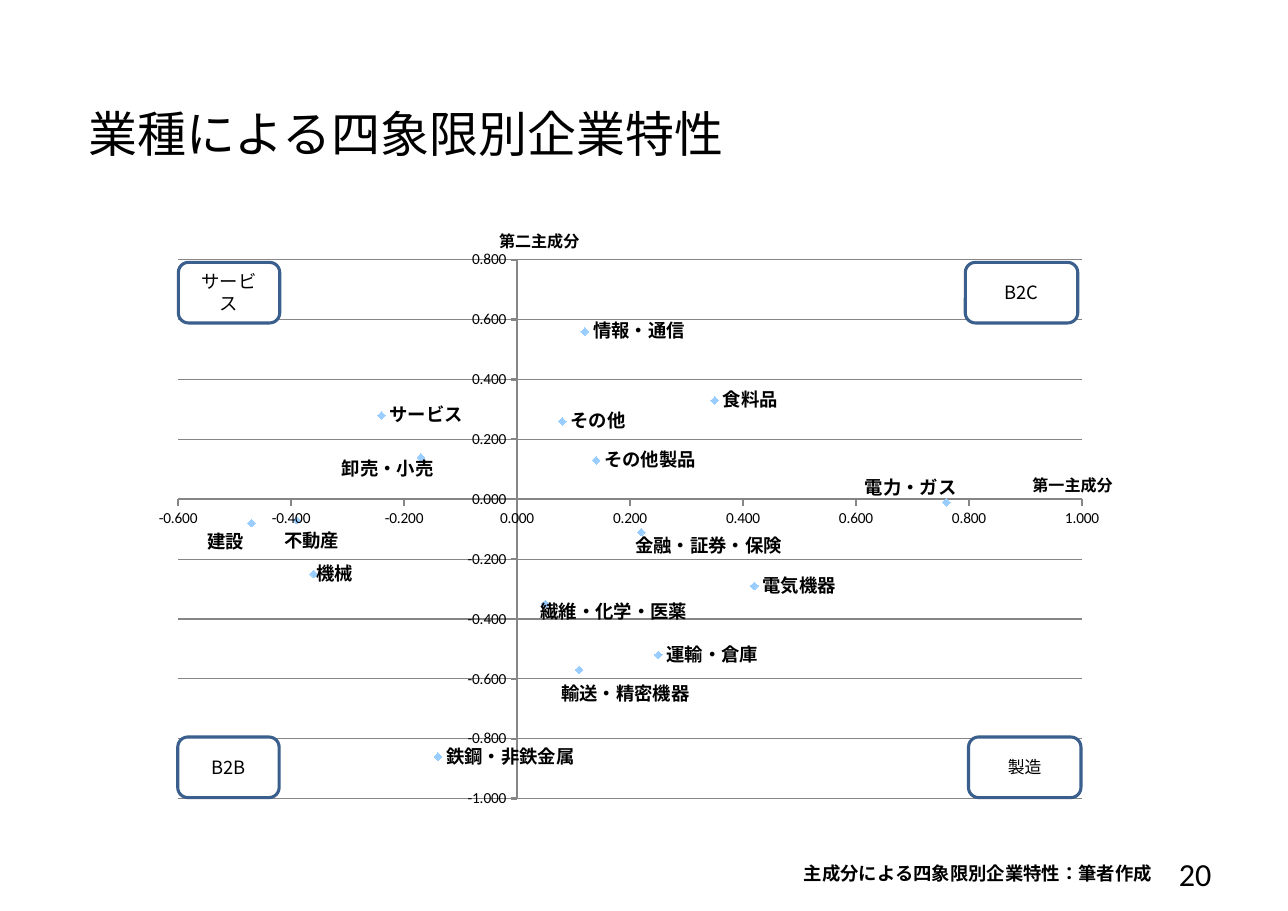
from lxml import etree
from pptx import Presentation
from pptx.chart.data import XyChartData
from pptx.dml.color import RGBColor
from pptx.enum.chart import XL_CHART_TYPE, XL_LABEL_POSITION, XL_MARKER_STYLE, XL_TICK_MARK
from pptx.enum.lang import MSO_LANGUAGE_ID
from pptx.enum.shapes import MSO_SHAPE
from pptx.enum.text import MSO_ANCHOR, PP_ALIGN
from pptx.oxml.ns import qn
from pptx.util import Inches, Pt

SCATTER = XL_CHART_TYPE.XY_SCATTER
LABEL_RIGHT = XL_LABEL_POSITION.RIGHT
DIAMOND = XL_MARKER_STYLE.DIAMOND
TICK_OUT, TICK_NONE = XL_TICK_MARK.OUTSIDE, XL_TICK_MARK.NONE
JAPANESE = MSO_LANGUAGE_ID.JAPANESE
ROUND_RECT = MSO_SHAPE.ROUNDED_RECTANGLE
MIDDLE = MSO_ANCHOR.MIDDLE
LEFT, CENTER, RIGHT = PP_ALIGN.LEFT, PP_ALIGN.CENTER, PP_ALIGN.RIGHT

W, H = Inches(11.69), Inches(8.27)
LATIN, CJK = "Calibri", "Noto Sans CJK JP"
BLACK, WHITE, GRAY, BORDER, MARKER = "000000", "FFFFFF", "868686", "3A5F8C", "99CCFF"

# Industry, first component, second component, label shift in % of the chart
INDUSTRIES = [
    ("食料品", 0.35, 0.33, 0, 0),
    ("建設", -0.47, -0.08, -4.8, 3.2),
    ("繊維・化学・医薬", 0.05, -0.35, -1.2, 1.3),
    ("鉄鋼・非鉄金属", -0.14, -0.86, 0, 0),
    ("機械", -0.36, -0.25, -0.5, 0),
    ("電気機器", 0.42, -0.29, 0, 0),
    ("輸送・精密機器", 0.11, -0.57, -2.4, 4.1),
    ("その他製品", 0.14, 0.13, 0, 0),
    ("卸売・小売", -0.17, 0.14, -8, 2),
    ("金融・証券・保険", 0.22, -0.11, -1.3, 2.3),
    ("運輸・倉庫", 0.25, -0.52, 0, 0),
    ("電力・ガス", 0.76, -0.01, -8.2, -2.3),
    ("情報・通信", 0.12, 0.56, 0, 0),
    ("不動産", -0.39, -0.07, -1.9, 3.5),
    ("サービス", -0.24, 0.28, 0, 0),
    ("その他", 0.08, 0.26, 0, 0),
]

# Quadrant name, left, top, width (in % of the slide), size
TOP, BOTTOM, BOX_H = 28.8, 80.9, 6.65
QUADRANTS = [
    ("サービス", 13.85, TOP, 7.87, 12),
    ("B2B", 13.8, BOTTOM, 7.87, 12),
    ("B2C", 74.95, TOP, 8.73, 12),
    ("製造", 75.2, BOTTOM, 8.73, 11),
]


def rgb(value):
    return RGBColor.from_string(value)


def area(x, y, w, h):
    """Turn percentages of the slide into lengths."""
    return [int(v * side / 100) for v, side in zip((x, y, w, h), (W, H, W, H))]


def write(tf, text, size=12, bold=False, font=LATIN, align=LEFT):
    p = tf.paragraphs[0]
    p.alignment = align
    r = p.add_run()
    r.text = text
    r.font.size, r.font.bold, r.font.name = Pt(size), bold, font
    r.font.color.rgb = rgb(BLACK)
    r.font.language_id = JAPANESE
    # The same typeface for East Asian characters
    etree.SubElement(r._r.get_or_add_rPr(), qn("a:ea")).set("typeface", font)


def set_frame(tf, side, edge):
    tf.word_wrap = True
    tf.vertical_anchor = MIDDLE
    tf.margin_left = tf.margin_right = Inches(side)
    tf.margin_top = tf.margin_bottom = Inches(edge)


def add_text(s, box, text, **style):
    tf = s.shapes.add_textbox(*area(*box)).text_frame
    set_frame(tf, 0.11, 0.06)
    write(tf, text, **style)


def add_quadrant(s, name, x, y, w, size):
    sp = s.shapes.add_shape(ROUND_RECT, *area(x, y, w, BOX_H))
    sp.shadow.inherit = False
    sp.fill.solid()
    sp.fill.fore_color.rgb = rgb(WHITE)
    sp.line.color.rgb = rgb(BORDER)
    sp.line.width = Pt(2)
    set_frame(sp.text_frame, 0.14, 0.05)
    write(sp.text_frame, name, size=size, font=CJK, align=CENTER)


def set_layout(parent, index, **values):
    """Place a chart part by hand; the keywords are manualLayout entries."""
    for old in parent.findall(qn("c:layout")):
        parent.remove(old)
    layout = etree.Element(qn("c:layout"))
    manual = etree.SubElement(layout, qn("c:manualLayout"))
    for tag, value in values.items():
        etree.SubElement(manual, qn("c:" + tag)).set("val", str(value))
    parent.insert(index, layout)


def format_axis(axis, low, high, title):
    axis.minimum_scale, axis.maximum_scale, axis.major_unit = low, high, 0.2
    axis.major_tick_mark, axis.minor_tick_mark = TICK_OUT, TICK_NONE
    axis.tick_labels.number_format = "0.000"
    axis.tick_labels.number_format_is_linked = False
    axis.format.line.color.rgb = rgb(GRAY)
    axis.format.line.width = Pt(1.5)
    write(axis.axis_title.text_frame, title, size=10.5, bold=True)


def add_scatter(s):
    data = XyChartData(number_format="0.000")
    points = data.add_series("Series 1")
    for _, x, y, _, _ in INDUSTRIES:
        points.add_data_point(x, y)
    chart = s.shapes.add_chart(SCATTER, *area(6.87, 24.25, 84.86, 65.66), data).chart
    chart.has_legend = chart.has_title = False
    chart.font.size, chart.font.name = Pt(10), LATIN
    chart.font.color.rgb = rgb(BLACK)
    root = chart.element
    set_layout(root.xpath(".//c:plotArea")[0], 0, layoutTarget="inner",
               xMode="edge", yMode="edge", x=0.082, y=0.065, w=0.827, h=0.901)

    # Axes and their titles
    format_axis(chart.category_axis, -0.6, 1, "第一主成分")
    format_axis(chart.value_axis, -1, 0.8, "第二主成分")
    chart.category_axis.has_major_gridlines = False
    grid = chart.value_axis.major_gridlines.format.line
    grid.color.rgb, grid.width = rgb(GRAY), Pt(0.75)
    titles = root.xpath(".//c:valAx/c:title")
    for title, x, y in zip(titles, (0.861, 0.373), (0.419, 0.012)):
        set_layout(title, 1, xMode="edge", yMode="edge", x=x, y=y)
        body = title.find(".//" + qn("a:bodyPr"))
        body.set("rot", "0")
        body.set("vert", "horz")

    # Markers and point labels
    plot = chart.plots[0]
    plot.vary_by_categories = False
    series = plot.series[0]
    series.format.line.fill.background()
    series.marker.style, series.marker.size = DIAMOND, 5
    series.marker.format.fill.solid()
    series.marker.format.fill.fore_color.rgb = rgb(MARKER)
    series.marker.format.line.color.rgb = rgb(MARKER)
    for i, (name, _, _, _, _) in enumerate(INDUSTRIES):
        label = series.points[i].data_label
        write(label.text_frame, name, bold=True)
        label.position = LABEL_RIGHT
    for node, (_, _, _, dx, dy) in zip(root.xpath(".//c:dLbl"), INDUSTRIES):
        if dx or dy:
            set_layout(node, 1, x=dx / 100, y=dy / 100)
    for node in root.xpath(".//c:showLeaderLines"):
        node.set("val", "0")


def main():
    prs = Presentation()
    prs.slide_width, prs.slide_height = W, H
    s = prs.slides.add_slide(prs.slide_layouts[6])

    # Title, page number and source line
    add_text(s, (5.9, 10.3, 69.5, 8.5), "業種による四象限別企業特性", size=32)
    add_text(s, (71.65, 93.2, 23.35, 5.3), "20", size=21, align=RIGHT)
    add_text(s, (59.4, 93.95, 31, 3.75), "主成分による四象限別企業特性：筆者作成",
             bold=True, align=RIGHT)

    # Chart with the four quadrant names
    add_scatter(s)
    for quadrant in QUADRANTS:
        add_quadrant(s, *quadrant)
    prs.save("out.pptx")


if __name__ == "__main__":
    main()
